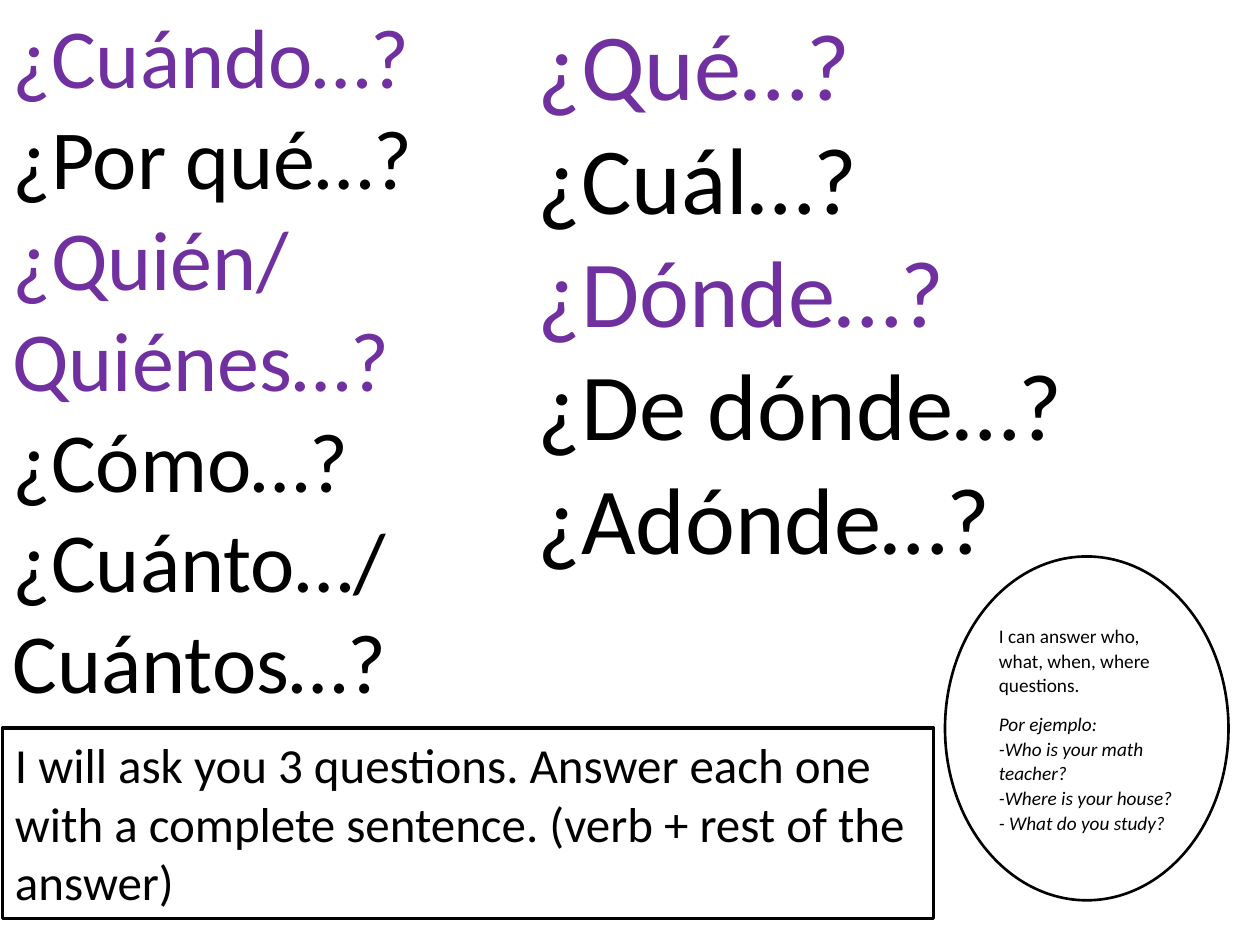
import pptx
import pptx.util
import pptx.dml.color
import pptx.enum.shapes
import pptx.enum.text

Pt = pptx.util.Pt
ANCHOR = pptx.enum.text.MSO_ANCHOR
SHAPE = pptx.enum.shapes.MSO_SHAPE

COLORS = {"accent": "7030A0", "ink": "000000", "paper": "FFFFFF"}


def color(name):
    return pptx.dml.color.RGBColor.from_string(COLORS[name])


def add_span(para, text, size=11, ink="ink", italic=False):
    span = para.add_run()
    span.text = text
    span.font.name = "Calibri"
    span.font.size = Pt(size)
    span.font.italic = italic
    span.font.color.rgb = color(ink)


def prepare_frame(box, anchor):
    frame = box.text_frame
    frame.word_wrap = True
    frame.vertical_anchor = anchor
    return frame


def add_question_list(page, bounds, lines, size, anchor=ANCHOR.TOP):
    """Put coloured lines, separated by line breaks, in one paragraph."""
    box = page.shapes.add_textbox(*map(Pt, bounds))
    para = prepare_frame(box, anchor).paragraphs[0]
    for index, (text, ink) in enumerate(lines):
        if index:
            para.add_line_break()
        add_span(para, text, size=size, ink=ink)


def add_outlined_shape(page, kind, bounds, line_width, anchor=ANCHOR.TOP):
    shape = page.shapes.add_shape(kind, *map(Pt, bounds))
    shape.shadow.inherit = False
    shape.fill.solid()
    shape.fill.fore_color.rgb = color("paper")
    shape.line.color.rgb = color("ink")
    shape.line.width = Pt(line_width)
    return prepare_frame(shape, anchor)


def add_paragraph(frame, text, first=False, spacing=1.0, after=0, **style):
    para = frame.paragraphs[0] if first else frame.add_paragraph()
    para.alignment = pptx.enum.text.PP_ALIGN.LEFT
    para.line_spacing = spacing
    para.space_after = Pt(after)
    add_span(para, text, **style)


def main():
    deck = pptx.Presentation()
    deck.slide_width, deck.slide_height = Pt(720), Pt(540)
    page = deck.slides.add_slide(deck.slide_layouts[6])

    # Question words, left and right columns
    add_question_list(page, (0, 0.7, 318, 407.5), [
        ("¿Cuándo…?", "accent"),
        ("¿Por qué…?", "ink"),
        ("¿Quién/", "accent"),
        ("Quiénes…?", "accent"),
        ("¿Cómo…?", "ink"),
        ("¿Cuánto…/", "ink"),
        ("Cuántos…?", "ink"),
    ], size=48, anchor=ANCHOR.MIDDLE)
    add_question_list(page, (300, 0, 420, 334), [
        ("¿Qué…?", "accent"),
        ("¿Cuál…?", "ink"),
        ("¿Dónde…?", "accent"),
        ("¿De dónde…?", "ink"),
        ("¿Adónde…?", "ink"),
    ], size=54)

    # Learning goal with examples
    goal = add_outlined_shape(page, SHAPE.OVAL, (540, 318, 162, 196.5), 1.5,
                              anchor=ANCHOR.MIDDLE)
    add_paragraph(goal, "I can answer who, what, when, where questions.",
                  first=True, spacing=1.07, after=8)
    for example in ("Por ejemplo:", "-Who is your math teacher?",
                    "-Where is your house?", "- What do you study?"):
        add_paragraph(goal, example, spacing=1.07, italic=True)

    # Task
    task = add_outlined_shape(page, SHAPE.RECTANGLE, (1.5, 416, 532, 109), 2)
    add_paragraph(task, "I will ask you 3 questions. Answer each one with a "
                  "complete sentence. (verb + rest of the answer)",
                  first=True, size=28)

    deck.save("out.pptx")


if __name__ == "__main__":
    main()
